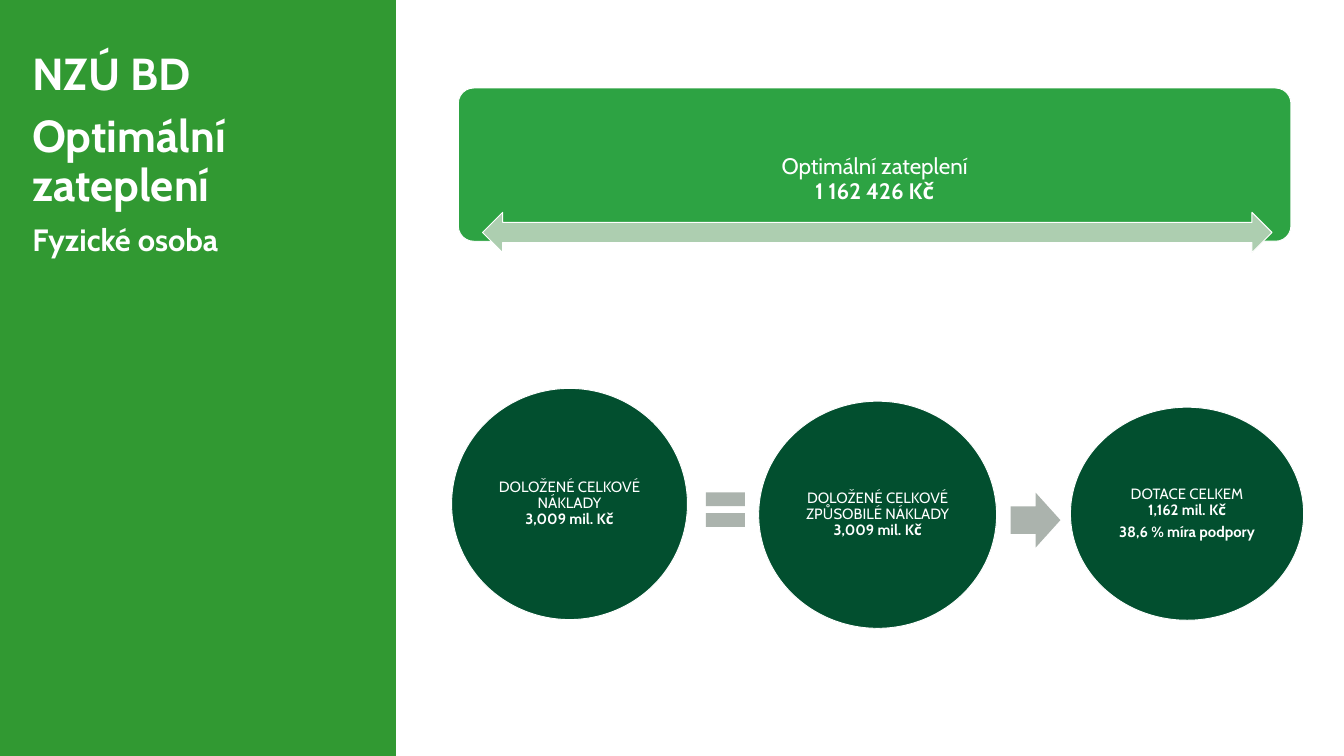
from dataclasses import dataclass

from pptx import Presentation
from pptx.dml.color import RGBColor
from pptx.enum.shapes import MSO_SHAPE
from pptx.enum.text import MSO_ANCHOR, MSO_AUTO_SIZE, PP_ALIGN
from pptx.util import Inches, Pt


@dataclass(frozen=True)
class Theme:
    font: str = "Cabin"
    white: str = "FFFFFF"
    panel: str = "319932"
    banner: str = "2DA343"
    circle: str = "024F2F"
    operator: str = "ABB3AD"
    span: str = "ADCEB0"
    title_size: int = 48
    subtitle_size: int = 33
    banner_size: int = 24
    circle_size: int = 16


THEME = Theme()


def add_box(slide, kind, box, fill, outlined=False):
    sp = slide.shapes.add_shape(kind, *map(Inches, box))
    sp.shadow.inherit = False
    sp.fill.solid()
    sp.fill.fore_color.rgb = RGBColor.from_string(fill)
    if outlined:
        sp.line.color.rgb = RGBColor.from_string(THEME.white)
        sp.line.width = Pt(1)
    else:
        sp.line.fill.background()
    return sp


def set_insets(tf, left, top, right, bottom):
    tf.margin_left, tf.margin_top = Inches(left), Inches(top)
    tf.margin_right, tf.margin_bottom = Inches(right), Inches(bottom)


def add_run(p, text, size, bold):
    r = p.add_run()
    r.text = text
    r.font.name = THEME.font
    r.font.size = Pt(size)
    r.font.bold = bold
    r.font.color.rgb = RGBColor.from_string(THEME.white)


def write_figures(tf, label, amount, size, note=None):
    """Write a centred label with a bold amount below, and perhaps a bold note."""
    tf.word_wrap = True
    tf.vertical_anchor = MSO_ANCHOR.MIDDLE
    p = tf.paragraphs[0]
    add_run(p, label, size, False)
    p.add_line_break()
    add_run(p, amount, size, True)
    if note:
        add_run(tf.add_paragraph(), note, size, True)
    for p in tf.paragraphs:
        p.alignment = PP_ALIGN.CENTER
        p.line_spacing = 0.9
        p.space_after = Pt(0.35 * size)


def add_title(slide, lines):
    sp = slide.shapes.title
    sp.left, sp.top = Inches(0.33), Inches(0.7)
    sp.width, sp.height = Inches(5.78), Inches(3.75)
    tf = sp.text_frame
    tf.word_wrap = True
    tf.auto_size = MSO_AUTO_SIZE.NONE
    tf.vertical_anchor = MSO_ANCHOR.TOP
    set_insets(tf, 0.15, 0.07, 0.15, 0.07)
    for i, (text, size) in enumerate(lines):
        p = tf.add_paragraph() if i else tf.paragraphs[0]
        p.alignment = PP_ALIGN.LEFT
        p.line_spacing = 0.9
        p.space_before = Pt(15 if i else 0)
        add_run(p, text, size, True)


def add_panel(slide):
    """Add the side panel behind everything else."""
    sp = add_box(slide, MSO_SHAPE.RECTANGLE, (0, 0, 5.89, 11.25), THEME.panel)
    slide.shapes._spTree.insert(2, sp._element)


def add_banner(slide):
    sp = add_box(slide, MSO_SHAPE.ROUNDED_RECTANGLE, (6.82, 1.31, 12.39, 2.28),
                 THEME.banner, outlined=True)
    sp.adjustments[0] = 0.1
    set_insets(sp.text_frame, 0.19, 0.64, 0.19, 0.19)
    write_figures(sp.text_frame, "Optimální zateplení", "1 162 426 Kč",
                  THEME.banner_size)
    add_box(slide, MSO_SHAPE.LEFT_RIGHT_ARROW, (7.18, 3.16, 11.75, 0.6),
            THEME.span, outlined=True)


def add_circle(slide, box, label, amount, note=None):
    sp = add_box(slide, MSO_SHAPE.OVAL, box, THEME.circle, outlined=True)
    set_insets(sp.text_frame, 0.02, 0.02, 0.02, 0.02)
    write_figures(sp.text_frame, label, amount, THEME.circle_size, note)


def main():
    prs = Presentation()
    prs.slide_width, prs.slide_height = Inches(20), Inches(11.25)
    slide = prs.slides.add_slide(prs.slide_layouts[5])

    add_panel(slide)
    add_title(slide, [
        ("NZÚ BD", THEME.title_size),
        ("Optimální zateplení", THEME.title_size),
        ("Fyzické osoba", THEME.subtitle_size),
    ])
    add_banner(slide)

    add_circle(slide, (6.72, 5.78, 3.51, 3.44),
               "DOLOŽENÉ CELKOVÉ NÁKLADY", "3,009 mil. Kč")
    add_box(slide, MSO_SHAPE.MATH_EQUAL, (10.4, 7.15, 0.79, 0.87), THEME.operator)
    add_circle(slide, (11.29, 5.97, 3.54, 3.38),
               "DOLOŽENÉ CELKOVÉ ZPŮSOBILÉ NÁKLADY", "3,009 mil. Kč")
    add_box(slide, MSO_SHAPE.RIGHT_ARROW, (15.04, 7.33, 0.74, 0.82), THEME.operator)
    add_circle(slide, (15.93, 6.06, 3.47, 3.17),
               "DOTACE CELKEM", "1,162 mil. Kč", "38,6 % míra podpory")

    prs.save("out.pptx")


if __name__ == "__main__":
    main()
